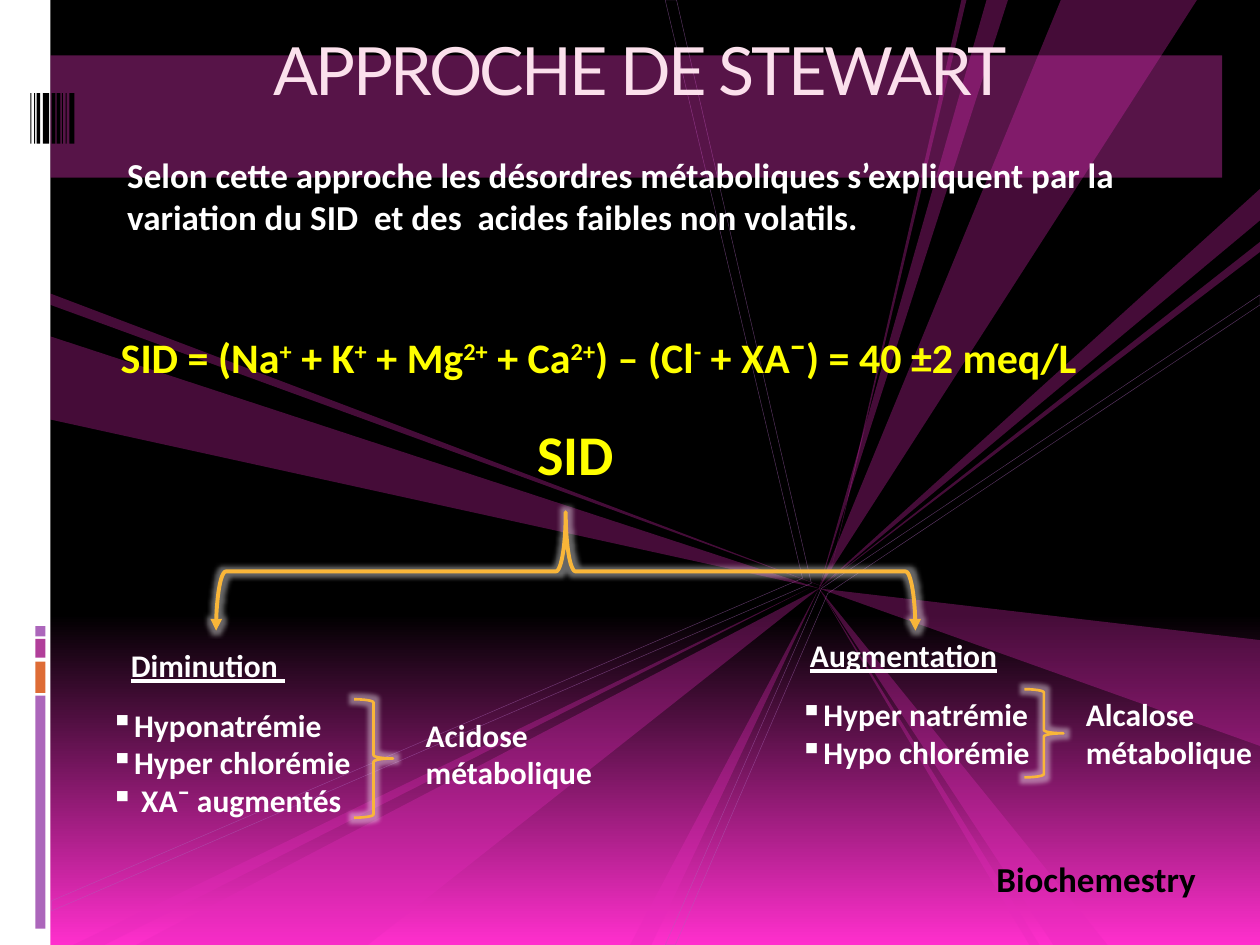
from lxml import etree
from pptx import Presentation
from pptx.dml.color import RGBColor
from pptx.enum.shapes import MSO_SHAPE
from pptx.enum.text import PP_ALIGN
from pptx.oxml.ns import qn
from pptx.util import Inches, Pt

RECT = MSO_SHAPE.RECTANGLE
BRACE = MSO_SHAPE.RIGHT_BRACE
LEFT, MID = PP_ALIGN.LEFT, PP_ALIGN.CENTER

THEME = {
    "font": "Calibri", "head": "Lato",
    "white": "FFFFFF", "black": "000000", "pink": "FF2FCD",
    "rose": "FBE0EC", "yellow": "FFFF00", "gold": "F9B639",
    "violet": "AC66BB", "orange": "DE6C36", "plum": "B13F9A",
    "ray": "E52ABB", "band": "DB33B6",
    "title": 38, "sid": 32, "sum": 24, "body": 20, "note": 18,
}

SIDE = [(5.52, 1.85, "violet"), (5.25, 0.25, "orange"),
        (5.07, 0.15, "plum"), (4.97, 0.08, "violet")]
BARS = [(0.24, 0.01), (0.27, 0.01), (0.29, 0.03), (0.34, 0.05), (0.41, 0.03),
        (0.45, 0.03), (0.49, 0.01), (0.52, 0.01), (0.55, 0.04)]
HUB = (6.5, 4.67)
WIRES = [
    [(5.28, 7.5), (6.52, 4.67), (10, 2.34), (10, 2.42), (6.57, 4.71), (5.36, 7.5)],
    [(0.41, 7.15), (0.41, 7.23), (6.44, 4.63), (5.37, 0), (5.28, 0), (6.37, 4.59)],
]
RAYS = [
    ((7.63, 0), (7.67, 0), (6.59, 4.55)),
    ((8.42, 0), (9.5, 0), HUB),
    ((10, 5.08), (10, 5.92), HUB),
    ((7.83, 0), (8, 0), HUB),
    ((8.36, 7.5), (8.79, 7.5), HUB),
    ((8.17, 7.5), (8.25, 7.5), HUB),
    ((10, 1.5), (10, 1.75), HUB),
    ((10, 1.92), (10, 2), HUB),
    ((1.08, 7.5), (2.92, 7.5), HUB),
    ((0.58, 7.5), (0.83, 7.5), (6.42, 4.67)),
    ((0.4, 2.67), (0.4, 3.33), HUB),
    ((0.4, 2.33), (0.4, 2.42), (6.57, 4.67)),
    ((5, 7.5), (5.17, 7.5), HUB),
]

TITLE = "APPROCHE DE STEWART"
INTRO = ("Selon cette approche les désordres métaboliques s’expliquent par la "
         "variation du SID  et des  acides faibles non volatils.")
SUM = ["SID = (Na", "+", " + K", "+", " + Mg", "2+", " + Ca", "2+",
       ") – (Cl", "-", " + XA¯) = 40 ±2 meq/L"]
SIDES = [
    {"head": "Diminution ", "at": (0.94, 5.08, 2.03, 0.4),
     "list": ["Hyponatrémie", "Hyper chlorémie", " XA¯ augmentés"],
     "box": (0.78, 5.55, 2.34, 1.62), "brace": (2.81, 5.55, 0.31, 0.94),
     "end": "Acidose métabolique", "spot": (3.28, 5.63, 1.95, 0.71)},
    {"head": "Augmentation", "at": (6.33, 5, 2.19, 0.4),
     "list": ["Hyper natrémie", "Hypo chlorémie"],
     "box": (6.25, 5.47, 2.34, 1.01), "brace": (8.13, 5.47, 0.31, 0.7),
     "end": "Alcalose métabolique", "spot": (8.52, 5.47, 1.64, 0.71)},
]


def rgb(name):
    return RGBColor.from_string(THEME[name])


def fade(fill, part):
    tint = fill._xPr.find(".//" + qn("a:srgbClr"))
    etree.SubElement(tint, qn("a:alpha"), val=str(part * 1000))


def paint(shape, name, part=100):
    shape.shadow.inherit = False
    shape.fill.solid()
    shape.fill.fore_color.rgb = rgb(name)
    shape.line.fill.background()
    if part < 100:
        fade(shape.fill, part)


def block(slide, at, name, part=100):
    paint(slide.shapes.add_shape(RECT, *map(Inches, at)), name, part)


def outline(slide, spots):
    first, *rest = [(Inches(x), Inches(y)) for x, y in spots]
    pen = slide.shapes.build_freeform(*first, scale=1)
    pen.add_line_segments(rest, close=True)
    return pen.convert_to_shape()


def wire(slide, spots):
    shape = outline(slide, spots)
    shape.shadow.inherit = False
    shape.fill.background()
    shape.line.width = Pt(0.25)
    shape.line.color.rgb = rgb("violet")
    fade(shape.line.fill, 53)


def brace(slide, at, width, turn=0, tips=False):
    shape = slide.shapes.add_shape(BRACE, *map(Inches, at))
    shape.rotation = turn
    shape.shadow.inherit = False
    shape.fill.background()
    shape.line.color.rgb = rgb("gold")
    shape.line.width = Pt(width)
    props = shape._element.spPr
    if tips:
        for tag in ("a:headEnd", "a:tailEnd"):
            etree.SubElement(props.find(qn("a:ln")), qn(tag), type="triangle")
    glow = etree.SubElement(props.find(qn("a:effectLst")), qn("a:glow"), rad=str(Pt(5)))
    tint = etree.SubElement(glow, qn("a:srgbClr"), val=THEME["white"])
    etree.SubElement(tint, qn("a:alpha"), val="40000")


def write(slide, at, lines, size, name="white", font="font", bold=True, align=LEFT):
    frame = slide.shapes.add_textbox(*map(Inches, at)).text_frame
    frame.word_wrap = True
    frame.text = "\n".join(lines)
    for para in frame.paragraphs:
        para.alignment = align
        for run in para.runs:
            style(run, size, name, font, bold)
    return frame


def style(run, size, name, font="font", bold=True):
    run.font.size = Pt(THEME[size])
    run.font.name = THEME[font]
    run.font.bold = bold
    run.font.color.rgb = rgb(name)


def backdrop(slide):
    fill = slide.background.fill
    fill.gradient()
    fill.gradient_angle = 270
    for stop, spot, name in zip(fill.gradient_stops, (0.65, 1), ("black", "pink")):
        stop.position = spot
        stop.color.rgb = rgb(name)
    block(slide, (0, 0, 0.4, 7.5), "white")
    for top, high, name in SIDE:
        block(slide, (0.28, top, 0.08, high), name)
    for spots in WIRES:
        wire(slide, spots)
    for spots in RAYS:
        paint(outline(slide, spots), "ray", 30)
    block(slide, (0.4, 0.44, 9.3, 0.97), "band", 40)
    for left, wide in BARS:
        block(slide, (left, 0.74, wide, 0.4), "black")


def content(slide):
    intro = write(slide, (0.86, 1.17, 8.29, 1.07), [INTRO], "body")
    intro.margin_left = Inches(0.15)
    intro.paragraphs[0].space_before = Pt(7)
    title = write(slide, (0.62, 0.16, 8.92, 0.85), [TITLE], "title", "rose", "head", False, MID)
    title.margin_top = Inches(0.07)
    title.paragraphs[0].runs[0].font._element.set("spc", "-150")

    para = write(slide, (0.86, 2.58, 8.83, 0.91), [], "sum").paragraphs[0]
    for i, part in enumerate(SUM):
        run = para.add_run()
        run.text = part
        style(run, "sum", "yellow")
        if i % 2:
            run.font._element.set("baseline", "30000")

    write(slide, (3.83, 3.28, 1.48, 0.64), ["SID"], "sid", "yellow", align=MID)
    brace(slide, (4.02, 1.76, 0.94, 5.55), 2.25, 270, True)
    for side in SIDES:
        head = write(slide, side["at"], [side["head"]], "note")
        head.paragraphs[0].runs[0].font.underline = True
        for para in write(slide, side["box"], side["list"], "note").paragraphs:
            etree.SubElement(para._p.get_or_add_pPr(), qn("a:buChar"), char="▪")
        brace(slide, side["brace"], 1.5)
        write(slide, side["spot"], [side["end"]], "note")
    write(slide, (7.81, 6.76, 2.19, 0.74), ["Biochemestry"], "body", "black")


def main():
    deck = Presentation()
    deck.slide_width, deck.slide_height = Inches(10), Inches(7.5)
    slide = deck.slides.add_slide(deck.slide_layouts[6])
    backdrop(slide)
    content(slide)
    deck.save("out.pptx")


if __name__ == "__main__":
    main()
